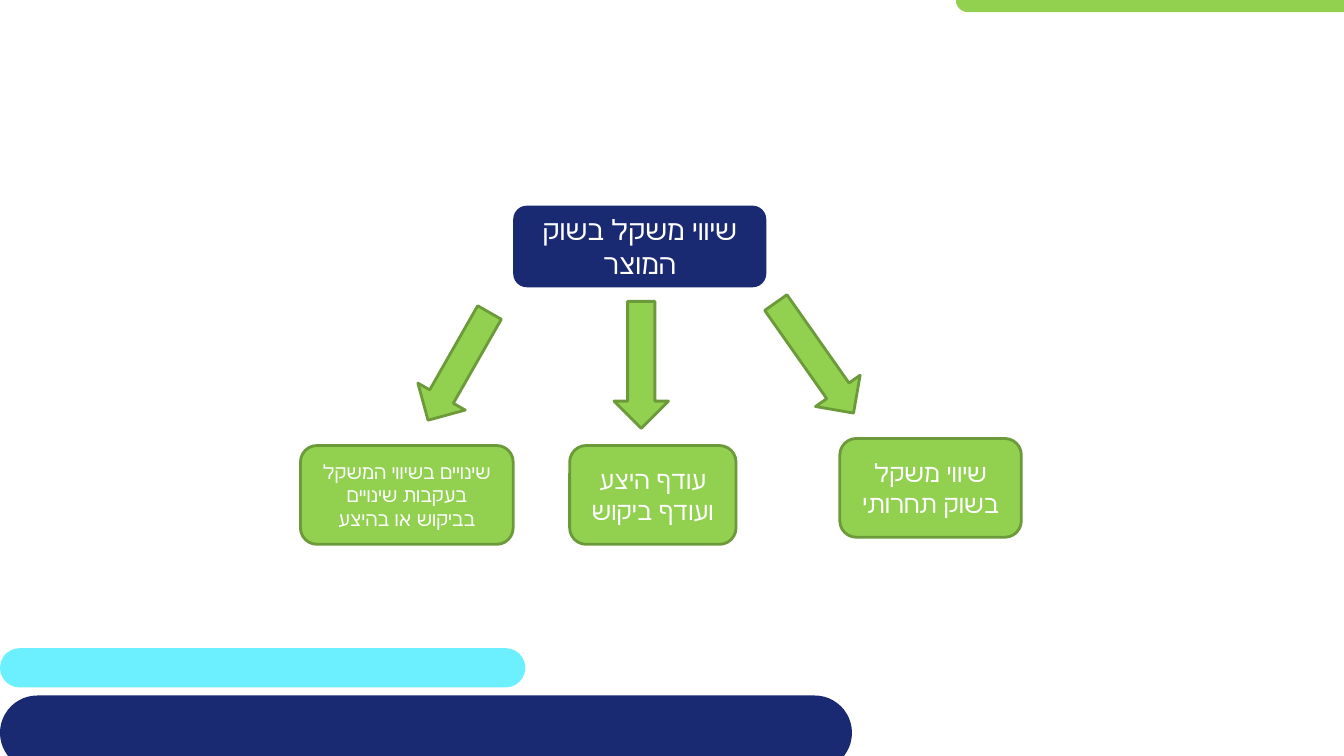
from dataclasses import dataclass

from lxml import etree
from pptx import Presentation
from pptx.dml.color import RGBColor
from pptx.enum.shapes import MSO_SHAPE
from pptx.enum.text import MSO_ANCHOR, PP_ALIGN
from pptx.oxml.ns import qn
from pptx.shapes.autoshape import Shape
from pptx.slide import Slide
from pptx.util import Inches, Pt

ROUNDED = MSO_SHAPE.ROUNDED_RECTANGLE
PROCESS = MSO_SHAPE.FLOWCHART_ALTERNATE_PROCESS
DOWN_ARROW = MSO_SHAPE.DOWN_ARROW
CENTER = PP_ALIGN.CENTER
MIDDLE = MSO_ANCHOR.MIDDLE
BLANK_LAYOUT = 6


@dataclass(frozen=True)
class Theme:
    navy: str = "192A72"
    green: str = "92D050"
    outline: str = "6C9A3B"
    cyan: str = "6CF0FF"
    white: str = "FFFFFF"
    font: str = "Quicksand"
    topic_size: int = 20
    subtopic_size: int = 18
    small_size: int = 14
    outline_width: int = 2


THEME = Theme()


@dataclass(frozen=True)
class Block:
    left: float
    top: float
    width: float
    height: float
    fill: str = THEME.green


@dataclass(frozen=True)
class Arrow(Block):
    rotation: float = 0


@dataclass(frozen=True)
class Node(Block):
    text: str = ""
    size: int = THEME.subtopic_size
    geometry: MSO_SHAPE = ROUNDED
    outlined: bool = True


BARS = (
    Block(0, 6.43, 5.21, 0.39, THEME.cyan),
    Block(9.48, -0.12, 5.8, 0.24),
    Block(0, 6.9, 8.45, 0.74, THEME.navy),
)
ARROWS = (
    Arrow(4.28, 3.02, 0.54, 1.23, rotation=29.7),
    Arrow(6.09, 2.99, 0.54, 1.26),
    Arrow(7.81, 2.88, 0.54, 1.34, rotation=324.9),
)
TOPIC = Node(5.09, 2.04, 2.51, 0.81, THEME.navy, "שיווי משקל בשוק המוצר",
             THEME.topic_size, PROCESS, outlined=False)
SUBTOPICS = (
    Node(8.33, 4.35, 1.8, 0.98, text="שיווי משקל בשוק תחרותי"),
    Node(5.65, 4.42, 1.65, 0.98, text="עודף היצע ועודף ביקוש"),
    Node(2.98, 4.42, 2.11, 0.98,
         text="שינויים בשיווי המשקל בעקבות שינויים בביקוש או בהיצע",
         size=THEME.small_size),
)


def add_block(slide: Slide, block: Block, geometry: MSO_SHAPE, outlined: bool) -> Shape:
    shape = slide.shapes.add_shape(
        geometry, Inches(block.left), Inches(block.top),
        Inches(block.width), Inches(block.height))
    shape.shadow.inherit = False
    shape.fill.solid()
    shape.fill.fore_color.rgb = RGBColor.from_string(block.fill)
    if outlined:
        shape.line.color.rgb = RGBColor.from_string(THEME.outline)
        shape.line.width = Pt(THEME.outline_width)
    else:
        shape.line.fill.background()
    return shape


def add_bar(slide: Slide, bar: Block) -> None:
    shape = add_block(slide, bar, ROUNDED, outlined=False)
    shape.adjustments[0] = 0.5


def add_arrow(slide: Slide, arrow: Arrow) -> None:
    shape = add_block(slide, arrow, DOWN_ARROW, outlined=True)
    shape.rotation = arrow.rotation


def add_node(slide: Slide, node: Node) -> None:
    shape = add_block(slide, node, node.geometry, node.outlined)
    frame = shape.text_frame
    frame.word_wrap = True
    frame.vertical_anchor = MIDDLE
    paragraph = frame.paragraphs[0]
    paragraph.text = node.text
    paragraph.alignment = CENTER
    paragraph.font.size = Pt(node.size)
    paragraph.font.color.rgb = RGBColor.from_string(THEME.white)
    paragraph.font.name = THEME.font
    # Hebrew needs right-to-left order and a complex-script font
    properties = paragraph._p.get_or_add_pPr()
    properties.set("rtl", "1")
    defaults = properties.find(qn("a:defRPr"))
    etree.SubElement(defaults, qn("a:cs")).set("typeface", THEME.font)


def main() -> None:
    presentation = Presentation()
    presentation.slide_width = Inches(13.33)
    presentation.slide_height = Inches(7.5)
    slide = presentation.slides.add_slide(presentation.slide_layouts[BLANK_LAYOUT])

    # Decorative bars
    for bar in BARS:
        add_bar(slide, bar)

    # Topic with arrows leading to its subtopics
    add_node(slide, TOPIC)
    for arrow in ARROWS:
        add_arrow(slide, arrow)
    for subtopic in SUBTOPICS:
        add_node(slide, subtopic)

    presentation.save("out.pptx")


if __name__ == "__main__":
    main()
